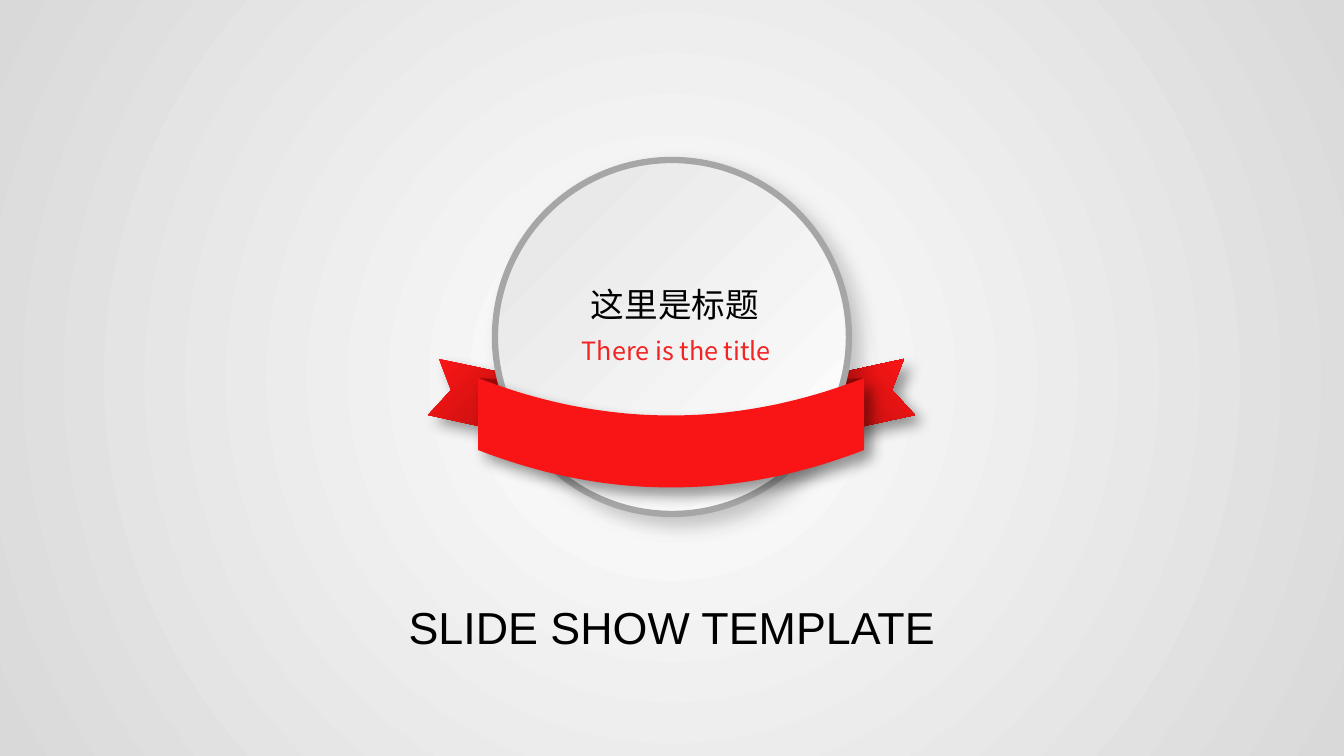
"""Build a title slide with a round badge, a red ribbon and a heading."""
import pptx
import pptx.dml.color
import pptx.enum.shapes
import pptx.enum.text
import pptx.oxml
import pptx.oxml.ns
import pptx.util

PX = 914400 / 100.8
FINE = 10
MIRROR = 1343
NAMESPACE = pptx.oxml.ns.nsdecls("a")


def color(value):
    return pptx.dml.color.RGBColor.from_string(value)


def paint(fill, parent, stops, direction):
    fill.solid()
    fill.fore_color.rgb = color(stops[-1][1])
    if len(stops) > 1:
        marks = "".join(
            f'<a:gs pos="{position * 1000}"><a:srgbClr val="{value}"/></a:gs>'
            for position, value in stops
        )
        solid = parent.find(pptx.oxml.ns.qn("a:solidFill"))
        parent.replace(solid, pptx.oxml.parse_xml(
            f'<a:gradFill {NAMESPACE} rotWithShape="1"><a:gsLst>{marks}</a:gsLst>'
            f"{direction}</a:gradFill>"
        ))


presentation = pptx.Presentation()
presentation.slide_width = round(1344 * PX)
presentation.slide_height = round(756 * PX)
slide = presentation.slides.add_slide(presentation.slide_layouts[5])

radial = '<a:path path="circle"><a:fillToRect {}/></a:path>'
center = radial.format('l="50000" t="50000" r="50000" b="50000"')
corner = radial.format('l="100000" t="100000"')
linear = '<a:lin ang="{}" scaled="0"/>'
background = slide.background.fill
background.solid()
paint(background, slide.element.cSld.bg.bgPr, [(0, "FFFFFF"), (100, "D9D9D9")], center)

tail = [(797, 382), (904, 359), (892, 390), (915, 415), (809, 438)]
fold = [(865, 378), (797, 382), (803, 416)]
tail_stops = [(0, "970D0D"), (50, "D71212"), (100, "FF1616")]
fold_stops = [(0, "A60A0A")]
steps = [index / 40 for index in range(41)]
top_edge = [(478 + 386 * step, 378 + 150 * step * (1 - step)) for step in steps]
ribbon = top_edge + [(x, y + 72) for x, y in reversed(top_edge)]
ribbon_shadow = (10, 8, 40)

badge_parts = [
    (tail, tail_stops, linear.format(315 * 60000), ribbon_shadow),
    (fold, fold_stops, "", None),
    ([(MIRROR - x, y) for x, y in tail], tail_stops, corner, ribbon_shadow),
    ([(MIRROR - x, y) for x, y in fold], fold_stops, "", None),
    (None, [(0, "E4E4E4"), (100, "FFFFFF")], linear.format(45 * 60000), (14, 9, 22)),
    (ribbon, [(0, "F91515")], "", ribbon_shadow),
]
for outline, stops, direction, shadow in badge_parts:
    if outline:
        points = [(round(x * FINE), round(y * FINE)) for x, y in outline]
        builder = slide.shapes.build_freeform(*points[0], scale=PX / FINE)
        builder.add_line_segments(points[1:], close=True)
        shape = builder.convert_to_shape()
        shape.line.fill.background()
    else:
        box = [round(length * PX) for length in (495, 160, 354, 354)]
        shape = slide.shapes.add_shape(pptx.enum.shapes.MSO_SHAPE.OVAL, *box)
        shape.line.color.rgb = color("A6A6A6")
        shape.line.width = pptx.util.Pt(4.5)
    properties = shape.element.spPr
    paint(shape.fill, properties, stops, direction)
    shape.shadow.inherit = False
    if shadow:
        blur, distance, opacity = shadow
        effects = properties.find(pptx.oxml.ns.qn("a:effectLst"))
        effects.append(pptx.oxml.parse_xml(
            f'<a:outerShdw {NAMESPACE} blurRad="{blur * 12700}" dist="{distance * 12700}" '
            f'dir="{45 * 60000}" algn="tl" rotWithShape="0"><a:srgbClr val="000000">'
            f'<a:alpha val="{opacity * 1000}"/></a:srgbClr></a:outerShdw>'
        ))

align = pptx.enum.text.PP_ALIGN
labels = [
    ("这里是标题", (581, 279, 202, 50), align.LEFT, 24, "Noto Sans CJK JP", "000000"),
    ("There is the title", (562, 330, 229, 40), align.CENTER, 18, "Noto Sans CJK SC", "F22424"),
    ("SLIDE SHOW TEMPLATE", (353, 595, 638, 64), align.CENTER, 32, "Arial", "000000"),
]
for text, place, alignment, size, font_name, text_color in labels:
    box = [round(length * PX) for length in place]
    if size == 32:
        shape = slide.shapes.title
        shape.left, shape.top, shape.width, shape.height = box
    else:
        shape = slide.shapes.add_textbox(*box)
    frame = shape.text_frame
    frame_format = {
        "word_wrap": True,
        "auto_size": pptx.enum.text.MSO_AUTO_SIZE.SHAPE_TO_FIT_TEXT,
        "vertical_anchor": pptx.enum.text.MSO_ANCHOR.TOP,
    }
    for name, value in frame_format.items():
        setattr(frame, name, value)
    paragraph = frame.paragraphs[0]
    paragraph.alignment = alignment
    run = paragraph.add_run()
    run.text = text
    run.font.color.rgb = color(text_color)
    for name, value in {"size": pptx.util.Pt(size), "name": font_name}.items():
        setattr(run.font, name, value)
    latin = run.font._element.find(pptx.oxml.ns.qn("a:latin"))
    latin.addnext(pptx.oxml.parse_xml(f'<a:ea {NAMESPACE} typeface="{font_name}"/>'))

presentation.save("out.pptx")
